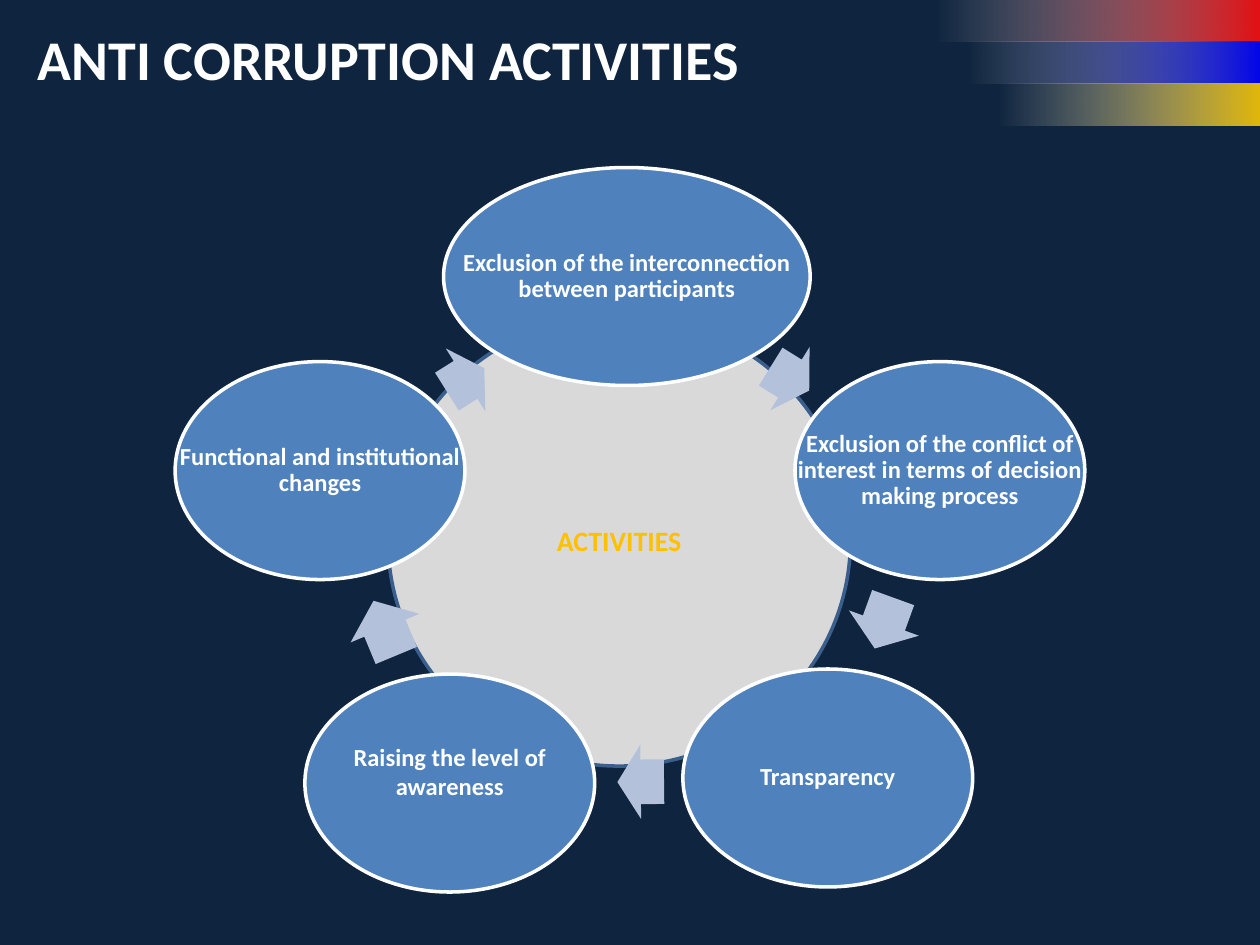
from lxml.etree import SubElement
from pptx import Presentation
from pptx.dml.color import RGBColor
from pptx.enum.shapes import MSO_SHAPE
from pptx.enum.text import MSO_ANCHOR, PP_ALIGN
from pptx.oxml.ns import qn
from pptx.util import Inches, Pt

NAVY = RGBColor(0x0F, 0x24, 0x3E)
WHITE = RGBColor(0xFF, 0xFF, 0xFF)
RED = RGBColor(0xFF, 0x0D, 0x0D)
BLUE = RGBColor(0x00, 0x00, 0xFF)
YELLOW = RGBColor(0xFF, 0xCC, 0x00)
GRAY = RGBColor(0xD9, 0xD9, 0xD9)
DARK_BLUE = RGBColor(0x3A, 0x5F, 0x8C)
GOLD = RGBColor(0xFF, 0xC0, 0x00)
STEEL = RGBColor(0x4F, 0x81, 0xBD)
PALE_BLUE = RGBColor(0xB3, 0xC1, 0xDB)


class SlideBuilder:
    font_name = "Calibri"

    def __init__(self, slide):
        self.slide = slide
        self.shapes = slide.shapes
        background = slide.background.fill
        background.solid()
        background.fore_color.rgb = NAVY

    def add_text(self, shape, text, size, color, spacing=1.0):
        frame = shape.text_frame
        frame.word_wrap = True
        frame.vertical_anchor = MSO_ANCHOR.MIDDLE
        paragraph = frame.paragraphs[0]
        paragraph.alignment = PP_ALIGN.CENTER
        paragraph.line_spacing = spacing
        run = paragraph.add_run()
        run.text = text
        font = run.font
        font.name, font.size, font.bold = self.font_name, Pt(size), True
        font.color.rgb = color

    def title(self, text, box):
        title = self.slide.shapes.title
        title.left, title.top, title.width, title.height = map(Inches, box)
        self.add_text(title, text, 32, WHITE)

    def shape(self, kind, box, fill=None, line=None):
        shape = self.shapes.add_shape(kind, *map(Inches, box))
        shape.shadow.inherit = False
        if fill is not None:
            shape.fill.solid()
            shape.fill.fore_color.rgb = fill
        if line is None:
            shape.line.fill.background()
        else:
            shape.line.color.rgb = line
            shape.line.width = Pt(2)
        return shape

    def fading_bar(self, box, color):
        bar = self.shape(MSO_SHAPE.RECTANGLE, box)
        bar.fill.gradient()
        bar.fill.gradient_angle = 0
        for stop, stop_color in zip(bar.fill.gradient_stops, (WHITE, color)):
            stop.color.rgb = stop_color
        # Transparent on the left, nearly opaque on the right
        colors = bar._element.spPr.iter(qn("a:srgbClr"))
        for element, opacity in zip(colors, (0, 89)):
            SubElement(element, qn("a:alpha")).set("val", str(opacity * 1000))

    def start_group(self):
        self.shapes = self.slide.shapes.add_group_shape().shapes

    def activity(self, text, box, spacing=0.9, lift=0):
        self.shape(MSO_SHAPE.OVAL, box, STEEL, WHITE)
        # The label uses the full width of the oval
        label = self.shapes.add_textbox(*map(Inches, box))
        frame = label.text_frame
        frame.margin_left = frame.margin_right = frame.margin_top = Inches(0.02)
        frame.margin_bottom = Inches(0.02 + lift)
        self.add_text(label, text, 14, WHITE, spacing)

    def arrow(self, box, rotation):
        arrow = self.shape(MSO_SHAPE.RIGHT_ARROW, box, PALE_BLUE)
        arrow.adjustments[0] = 0.6
        arrow.adjustments[1] = 0.5
        arrow.rotation = rotation


def main():
    presentation = Presentation()
    presentation.slide_width = Inches(10)
    presentation.slide_height = Inches(7.5)
    slide = presentation.slides.add_slide(presentation.slide_layouts[5])
    builder = SlideBuilder(slide)

    # Corner bars, each starting a quarter inch further right
    bar_height = 1 / 3
    for index, color in enumerate((RED, BLUE, YELLOW)):
        left = 7.42 + 0.25 * index
        builder.fading_bar((left, index * bar_height, 10.02 - left, bar_height), color)

    builder.title("ANTI CORRUPTION ACTIVITIES", (0, 0.25, 6.17, 0.42))

    # Central circle
    hub = builder.shape(MSO_SHAPE.OVAL, (3.08, 2.5, 3.67, 3.58), GRAY, DARK_BLUE)
    builder.add_text(hub, "ACTIVITIES", 16, GOLD)

    # Cycle of activities, clockwise from the top
    builder.start_group()
    wide, narrow, height = 2.91, 2.3, 1.73
    builder.activity("Exclusion of the interconnection between participants",
                     (3.52, 1.33, wide, height))
    builder.arrow((6.09, 2.71, 0.36, 0.59), 31.8)
    builder.activity("Exclusion of the conflict of interest in terms of decision making process",
                     (6.31, 2.87, narrow, height))
    builder.arrow((6.8, 4.65, 0.43, 0.59), 109.9)
    builder.activity("Transparency", (5.42, 5.31, narrow, height))
    builder.arrow((4.9, 5.91, 0.37, 0.59), 179.4)
    builder.activity("Raising the level of awareness",
                     (2.42, 5.35, narrow, height), spacing=1.0, lift=0.19)
    builder.arrow((2.82, 4.69, 0.47, 0.59), 247.4)
    builder.activity("Functional and institutional changes",
                     (1.39, 2.87, narrow, height))
    builder.arrow((3.52, 2.72, 0.35, 0.59), 327.9)

    presentation.save("out.pptx")


if __name__ == "__main__":
    main()
